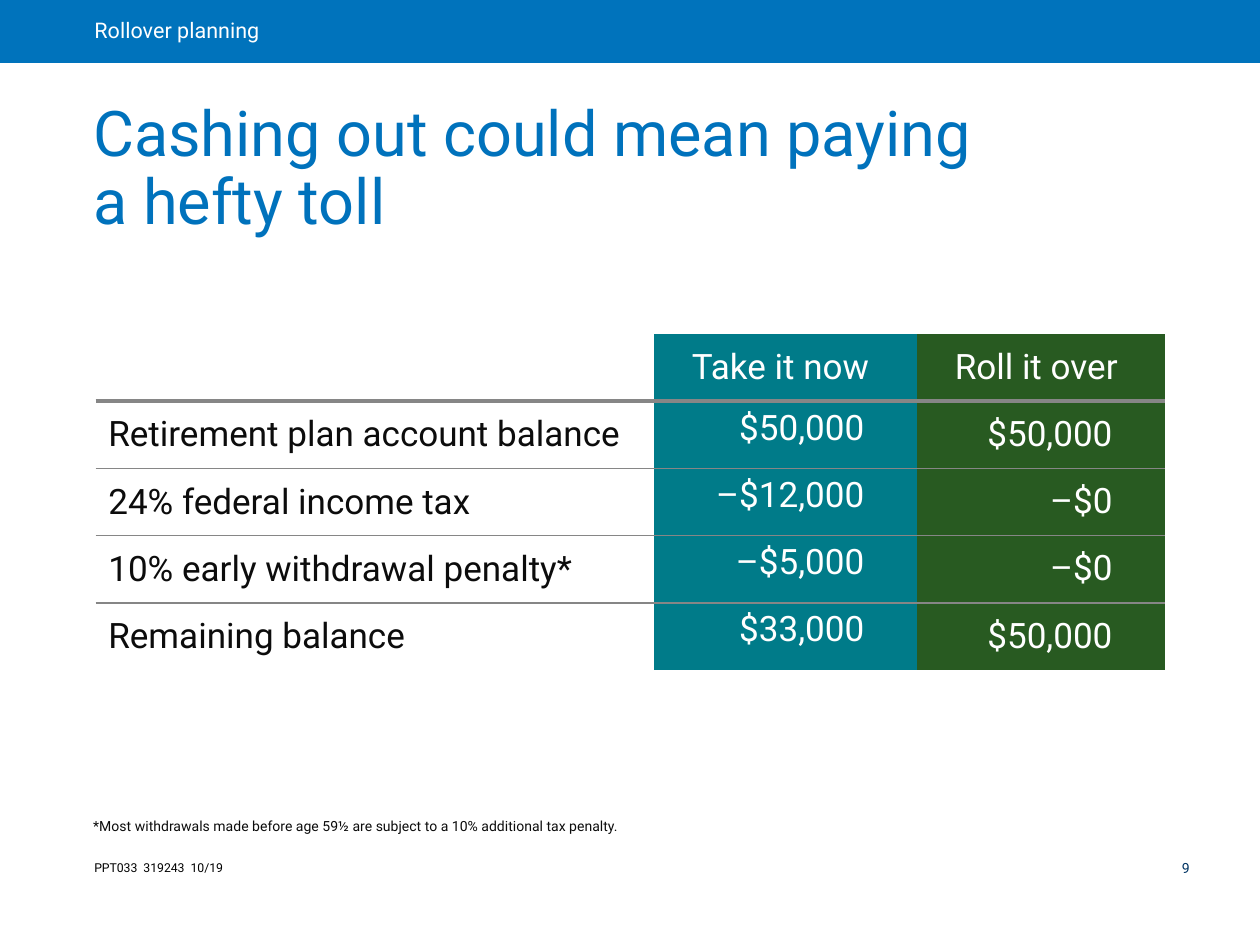
from lxml import etree
from pptx import Presentation
from pptx.dml.color import RGBColor
from pptx.enum.shapes import MSO_SHAPE
from pptx.enum.text import MSO_ANCHOR, MSO_AUTO_SIZE, PP_ALIGN
from pptx.oxml.ns import qn
from pptx.util import Inches, Pt

RECTANGLE = MSO_SHAPE.RECTANGLE
TOP, MIDDLE, BOTTOM = MSO_ANCHOR.TOP, MSO_ANCHOR.MIDDLE, MSO_ANCHOR.BOTTOM
LEFT, CENTER, RIGHT = PP_ALIGN.LEFT, PP_ALIGN.CENTER, PP_ALIGN.RIGHT
NO_AUTOFIT = MSO_AUTO_SIZE.NONE

FONT = "Roboto"
BAND_BLUE = RGBColor(0x00, 0x73, 0xBC)
TITLE_BLUE = RGBColor(0x00, 0x72, 0xBC)
NAVY = RGBColor(0x00, 0x34, 0x63)
TEAL = RGBColor(0x00, 0x7B, 0x89)
GREEN = RGBColor(0x28, 0x5A, 0x21)
RULE_GRAY = RGBColor(0x86, 0x86, 0x86)
TEXT_BLACK = RGBColor(0x0C, 0x0C, 0x0C)
BLACK = RGBColor(0x00, 0x00, 0x00)
WHITE = RGBColor(0xFF, 0xFF, 0xFF)

COLUMN_WIDTHS = (4.43, 2.09, 1.97)
COLUMN_FILLS = (None, TEAL, GREEN)
HEADER_STYLE = (CENTER, MIDDLE, (0.1, 0.1, 0.18, 0.1))
BODY_STYLES = (
    (LEFT, MIDDLE, (0.1, 0.05, 0.1, 0.05)),
    (RIGHT, TOP, (0.1, 0.05, 0.42, 0.05)),
    (RIGHT, TOP, (0.1, 0.1, 0.42, 0.1)),
)
ROWS = (
    ("", "Take it now", "Roll it over"),
    ("Retirement plan account balance", "$50,000", "$50,000"),
    ("24% federal income tax", "–$12,000", "–$0"),
    ("10% early withdrawal penalty*", "–$5,000", "–$0"),
    ("Remaining balance", "$33,000", "$50,000"),
)


def set_margins(target, margins):
    """Set left, top, right and bottom insets of a text frame or cell."""
    (target.margin_left, target.margin_top,
     target.margin_right, target.margin_bottom) = map(Inches, margins)


def write_text(text_frame, text, size, color, alignment=LEFT, spacing=1.0):
    """Write one paragraph and format its runs."""
    text_frame.text = text
    paragraph = text_frame.paragraphs[0]
    paragraph.alignment = alignment
    paragraph.line_spacing = spacing
    for run in paragraph.runs:
        run.font.name = FONT
        run.font.size = Pt(size)
        run.font.color.rgb = color


def add_band(slide, box, text):
    """Add the coloured section band."""
    band = slide.shapes.add_shape(RECTANGLE, *map(Inches, box))
    band.shadow.inherit = False
    band.fill.solid()
    band.fill.fore_color.rgb = BAND_BLUE
    band.line.fill.background()
    text_frame = band.text_frame
    text_frame.vertical_anchor = MIDDLE
    set_margins(text_frame, (0.75, 0, 0.22, 0))
    write_text(text_frame, text, 12.3, WHITE, spacing=0.9)


def place_title(slide, box, text):
    """Move and format the title placeholder."""
    title = slide.shapes.title
    title.left, title.top, title.width, title.height = map(Inches, box)
    text_frame = title.text_frame
    text_frame.auto_size = NO_AUTOFIT
    text_frame.word_wrap = True
    text_frame.vertical_anchor = BOTTOM
    set_margins(text_frame, (0.11, 0.06, 0.11, 0.06))
    write_text(text_frame, text, 36, TITLE_BLUE, spacing=0.9)


def add_note(slide, box, text, size, color, margins, anchor=TOP, spacing=1.0):
    """Add a small text box."""
    text_frame = slide.shapes.add_textbox(*map(Inches, box)).text_frame
    text_frame.word_wrap = True
    text_frame.vertical_anchor = anchor
    set_margins(text_frame, margins)
    write_text(text_frame, text, size, color, spacing=spacing)


def set_borders(cell, top, bottom):
    """Draw horizontal rules of the given widths, with no vertical rules."""
    properties = cell._tc.get_or_add_tcPr()
    for side, width in (("L", 0), ("R", 0), ("T", top), ("B", bottom)):
        line = etree.SubElement(properties, qn(f"a:ln{side}"), w=str(Pt(width)))
        if width:
            fill = etree.SubElement(line, qn("a:solidFill"))
            etree.SubElement(fill, qn("a:srgbClr"), val=str(RULE_GRAY))
        else:
            etree.SubElement(line, qn("a:noFill"))


def add_comparison_table(slide, box):
    """Add the table comparing cashing out with rolling over."""
    frame = slide.shapes.add_table(len(ROWS), len(COLUMN_WIDTHS), *map(Inches, box))
    table = frame.table
    table.first_row = False
    table.horz_banding = False
    for column, width in zip(table.columns, COLUMN_WIDTHS):
        column.width = Inches(width)
    rules = [0, 2.25] + [1] * (len(ROWS) - 2) + [0]
    for row_index, values in enumerate(ROWS):
        table.rows[row_index].height = Inches(box[3] / len(ROWS))
        for column_index, value in enumerate(values):
            cell = table.cell(row_index, column_index)
            set_borders(cell, rules[row_index], rules[row_index + 1])
            fill_color = COLUMN_FILLS[column_index]
            if fill_color is None:
                cell.fill.background()
            else:
                cell.fill.solid()
                cell.fill.fore_color.rgb = fill_color
            style = BODY_STYLES[column_index] if row_index else HEADER_STYLE
            alignment, cell.vertical_anchor, margins = style
            set_margins(cell, margins)
            text_color = WHITE if fill_color else TEXT_BLACK
            write_text(cell.text_frame, value, 20, text_color, alignment)


def main():
    """Build and save the slide."""
    presentation = Presentation()
    presentation.slide_width = Inches(10)
    presentation.slide_height = Inches(7.5)
    slide = presentation.slides.add_slide(presentation.slide_layouts[5])
    add_note(slide, (0.65, 6.78, 1.27, 0.22), "PPT033  319243  10/19",
             7, BLACK, (0.1, 0.05, 0.1, 0.05))
    add_note(slide, (9.25, 6.8, 0.5, 0.21), "9",
             8, NAVY, (0.13, 0.04, 0.04, 0.04), spacing=0.9)
    add_band(slide, (0, 0, 10, 0.5), "Rollover planning")
    place_title(slide, (0.63, 1.65, 8.62, 0.3),
                "Cashing out could mean paying\va hefty toll")
    add_note(slide, (0.63, 6.46, 8.62, 0.22),
             "*Most withdrawals made before age 59½ are subject to a 10% additional tax penalty.",
             8, TEXT_BLACK, (0.11, 0.06, 0.11, 0.06), BOTTOM, 1.1)
    add_comparison_table(slide, (0.76, 2.65, sum(COLUMN_WIDTHS), 2.65))
    presentation.save("out.pptx")


if __name__ == "__main__":
    main()
